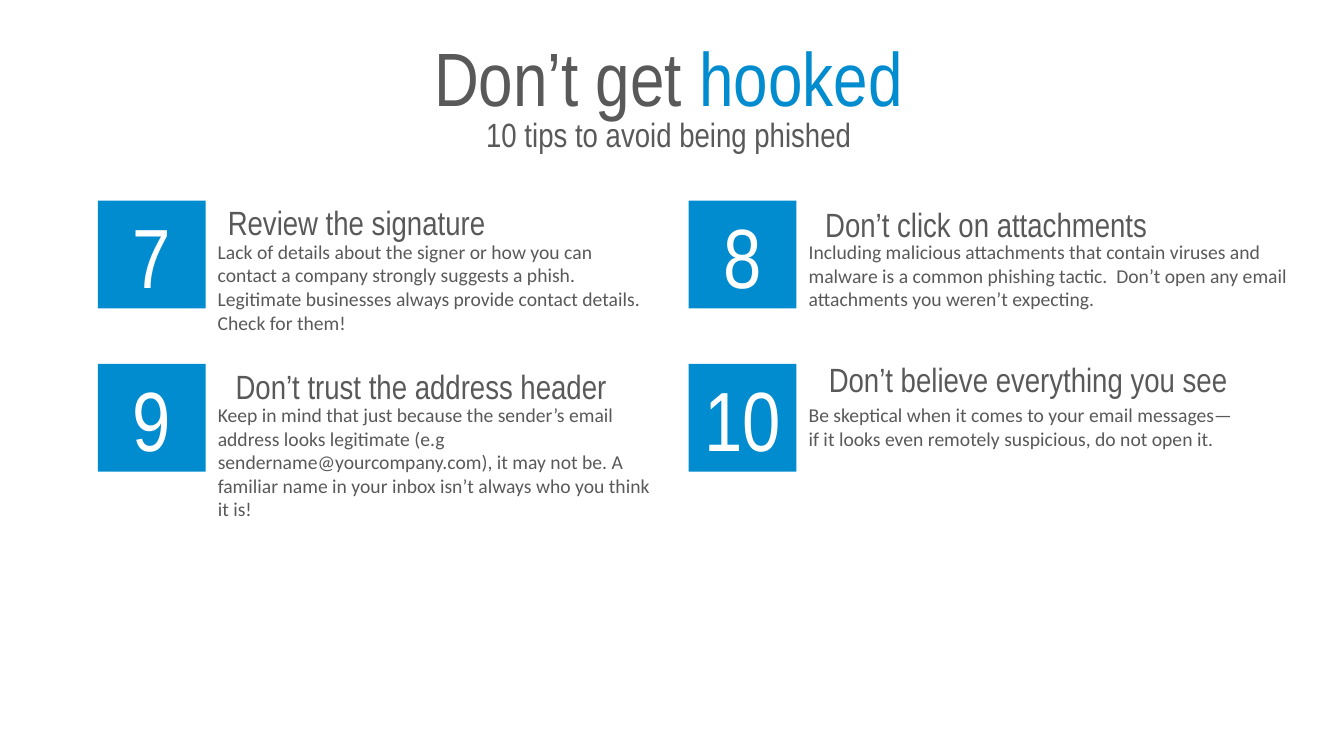
from pptx import Presentation
from pptx.dml.color import RGBColor
from pptx.enum.shapes import MSO_SHAPE
from pptx.enum.text import MSO_ANCHOR, MSO_AUTO_SIZE, PP_ALIGN
from pptx.util import Inches, Pt

BLUE = RGBColor(0x01, 0x8C, 0xCF)
GRAY = RGBColor(0x59, 0x59, 0x59)
WHITE = RGBColor(0xFF, 0xFF, 0xFF)
HEAD_FONT, BODY_FONT = "Arial Narrow", "Calibri"

LEFT, TOP = 0.97, 1.99
COLUMN_STEP, ROW_STEP = 5.86, 1.62
SQUARE = 1.07

# number, heading, heading box (dx, dy, width, height), details, details size
TIPS = [
    ("7", "Review the signature", (1.07, -0.21, 2.99, 0.67),
     "Lack of details about the signer or how you can contact a company "
     "strongly suggests a phish. Legitimate businesses always provide "
     "contact details. Check for them!", (4.64, 1.14)),
    ("8", "Don’t click on attachments", (1.13, -0.19, 3.64, 0.67),
     "Including malicious attachments that contain viruses and malware is a "
     "common phishing tactic.  Don’t open any email attachments you "
     "weren’t expecting.", (5.35, 0.91)),
    ("9", "Don’t trust the address header", (1.1, -0.2, 4.21, 0.73),
     "Keep in mind that just because the sender’s email address looks "
     "legitimate (e.g sendername@yourcompany.com), it may not be. A familiar "
     "name in your inbox isn’t always who you think it is!", (4.75, 1.38)),
    ("10", "Don’t believe everything you see", (1.16, -0.27, 4.41, 0.67),
     "Be skeptical when it comes to your email messages—if it looks even "
     "remotely suspicious, do not open it.", (4.66, 0.67)),
]


def set_margins(tf, side, end):
    tf.margin_left = tf.margin_right = Inches(side)
    tf.margin_top = tf.margin_bottom = Inches(end)


def style(p, font, size, color, align=PP_ALIGN.CENTER):
    p.alignment = align
    p.font.name, p.font.size = font, Pt(size)
    p.font.color.rgb = color


def add_text(shapes, x, y, w, h, text):
    """Add a wrapping text box and return its frame and first paragraph."""
    tf = shapes.add_textbox(Inches(x), Inches(y), Inches(w), Inches(h)).text_frame
    tf.word_wrap = True
    p = tf.paragraphs[0]
    p.add_run().text = text
    return tf, p


def add_header(shapes, x, y, w):
    _, p = add_text(shapes, x + 3.65, y + 0.66, 4.92, 0.42,
                    "10 tips to avoid being phished")
    style(p, HEAD_FONT, 24, GRAY)

    tf, p = add_text(shapes, x, y, w, 0.67, "Don’t get ")
    tf.vertical_anchor = MSO_ANCHOR.MIDDLE
    style(p, HEAD_FONT, 54, GRAY)
    r = p.add_run()
    r.text = "hooked"
    r.font.color.rgb = BLUE


def add_tip(shapes, x, y, number, heading, heading_box, details, details_size):
    group = shapes.add_group_shape().shapes

    tf, p = add_text(group, x + 0.99, y + 0.29, *details_size, details)
    set_margins(tf, 0.2, 0.1)
    tf.auto_size = MSO_AUTO_SIZE.SHAPE_TO_FIT_TEXT
    style(p, BODY_FONT, 14, GRAY, PP_ALIGN.LEFT)

    dx, dy, w, h = heading_box
    tf, p = add_text(group, x + dx, y + dy, w, h, heading)
    set_margins(tf, 0.2, 0.1)
    tf.word_wrap = False
    tf.auto_size = MSO_AUTO_SIZE.SHAPE_TO_FIT_TEXT
    style(p, HEAD_FONT, 24, GRAY)
    p.line_spacing = 1.3

    s = group.add_shape(MSO_SHAPE.RECTANGLE, Inches(x), Inches(y),
                        Inches(SQUARE), Inches(SQUARE))
    s.shadow.inherit = False
    s.fill.solid()
    s.fill.fore_color.rgb = BLUE
    s.line.fill.background()
    tf = s.text_frame
    set_margins(tf, 0, 0)
    tf.vertical_anchor = MSO_ANCHOR.MIDDLE
    tf.text = number
    style(tf.paragraphs[0], HEAD_FONT, 60, WHITE)


def main():
    prs = Presentation()
    prs.slide_width, prs.slide_height = Inches(13.33), Inches(7.5)
    shapes = prs.slides.add_slide(prs.slide_layouts[6]).shapes
    add_header(shapes, 0.52, 0.42, 12.22)
    for i, tip in enumerate(TIPS):
        row, column = divmod(i, 2)
        add_tip(shapes, LEFT + column * COLUMN_STEP, TOP + row * ROW_STEP, *tip)
    prs.save("out.pptx")


if __name__ == "__main__":
    main()
